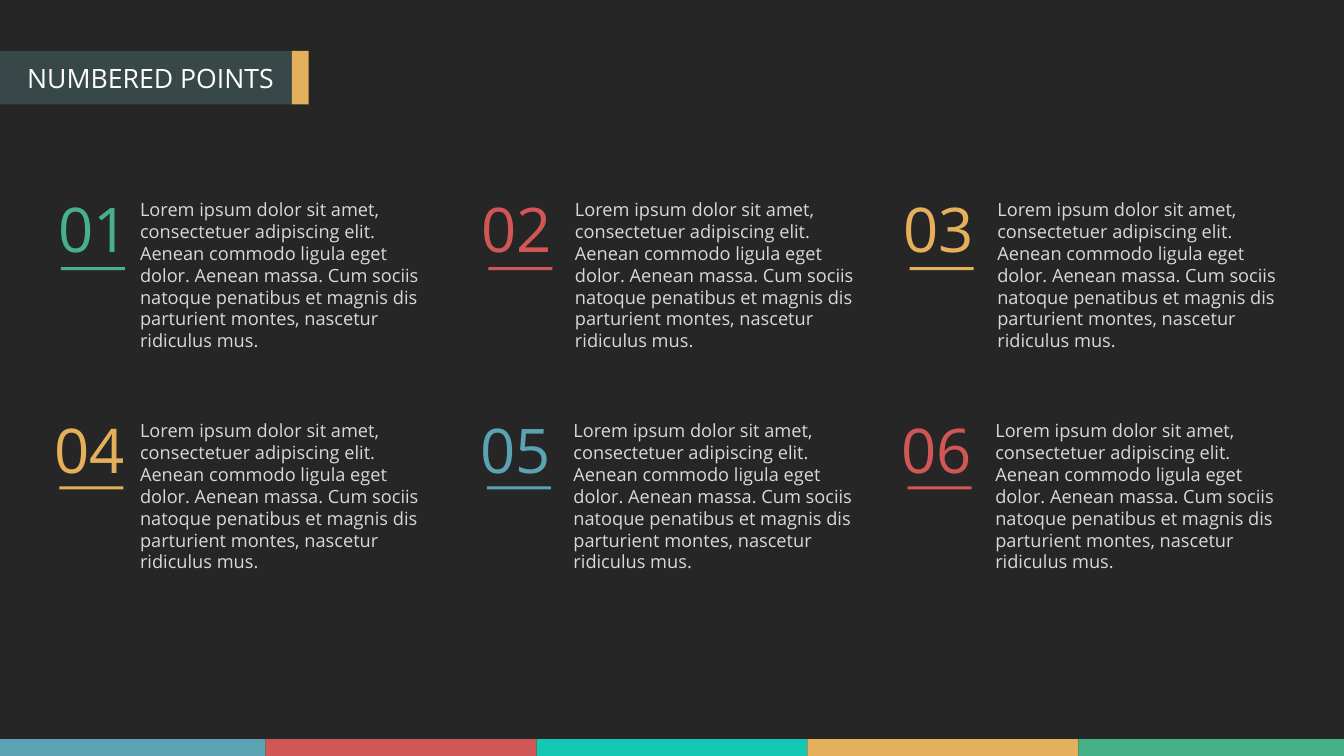
from pptx import Presentation
from pptx.dml.color import RGBColor
from pptx.enum.shapes import MSO_SHAPE as Shape
from pptx.enum.text import MSO_AUTO_SIZE as AutoSize
from pptx.util import Inches, Pt

COLUMNS, ROWS = 80, 45  # square grid cells, a third of an inch each
BLUE, RED, TEAL, GOLD, GREEN = "5BA2B2", "D15656", "13C7B2", "E5B05C", "47B289"
BODY = ("Lorem ipsum dolor sit amet, consectetuer adipiscing elit. Aenean commodo "
        "ligula eget dolor. Aenean massa. Cum sociis natoque penatibus et magnis dis "
        "parturient montes, nascetur ridiculus mus.")

# Per row: top of the number, top of the underline, then its points as
# colour and left columns of number, body and underline
POINT_ROWS = [
    (11.22, 15.9, [(GREEN, 3.18, 8.04, 3.63),
                   (RED, 28.38, 33.93, 29.07),
                   (GOLD, 53.49, 59.07, 54.15)]),
    (24.39, 28.95, [(GOLD, 2.94, 8.04, 3.54),
                    (BLUE, 28.29, 33.84, 28.98),
                    (RED, 53.37, 58.95, 54.03)]),
]


def color(hex_string):
    return RGBColor.from_string(hex_string)


class SlideBuilder:
    """Places styled elements on a slide, measured in grid cells."""
    font = "Open Sans"

    def __init__(self, presentation, background):
        self.cell_width = presentation.slide_width / COLUMNS
        self.cell_height = presentation.slide_height / ROWS
        self.slide = presentation.slides.add_slide(presentation.slide_layouts[6])
        fill = self.slide.background.fill
        fill.solid()
        fill.fore_color.rgb = color(background)

    def box(self, left, top, width, height):
        return (round(left * self.cell_width), round(top * self.cell_height),
                round(width * self.cell_width), round(height * self.cell_height))

    def block(self, left, top, width, height, fill):
        shape = self.slide.shapes.add_shape(
            Shape.RECTANGLE, *self.box(left, top, width, height))
        shape.shadow.inherit = False
        shape.fill.solid()
        shape.fill.fore_color.rgb = color(fill)
        shape.line.fill.background()

    def text(self, left, top, width, height, words, size, ink):
        shape = self.slide.shapes.add_textbox(*self.box(left, top, width, height))
        frame = shape.text_frame
        frame.text = words
        frame.word_wrap = True
        frame.auto_size = AutoSize.SHAPE_TO_FIT_TEXT
        font = frame.paragraphs[0].runs[0].font
        font.name, font.size = self.font, Pt(size)
        font.color.rgb = color(ink)

    def point(self, number, ink, top, line_top, number_left, body_left, line_left):
        self.text(number_left, top, 6.45, 4.74, f"{number:02}", 88, ink)
        self.text(body_left, top + 0.45, 17.73, 9.48, BODY, 26, "D9D9D9")
        self.block(line_left, line_top, 3.81, 0.18, ink)


def main():
    presentation = Presentation()
    presentation.slide_width, presentation.slide_height = Inches(26.67), Inches(15)
    builder = SlideBuilder(presentation, "262626")

    # Footer stripe: the outer blocks are slightly narrower
    edges = [0, 15.81, 31.94, 48.06, 64.19, COLUMNS]
    for left, right, fill in zip(edges, edges[1:], (BLUE, RED, TEAL, GOLD, GREEN)):
        builder.block(left, ROWS - 1, right - left, 1, fill)

    # Title band with its accent
    builder.block(0, 3.03, 17.37, 3.18, "384849")
    builder.block(17.37, 3.03, 1, 3.18, GOLD)
    builder.text(1.32, 3.51, 16.05, 2.22, "NUMBERED POINTS", 38, "FFFFFF")

    # Numbered points
    for row, (top, line_top, points) in enumerate(POINT_ROWS):
        for column, (ink, *lefts) in enumerate(points):
            number = row * len(points) + column + 1
            builder.point(number, ink, top, line_top, *lefts)

    presentation.save("out.pptx")


if __name__ == "__main__":
    main()
